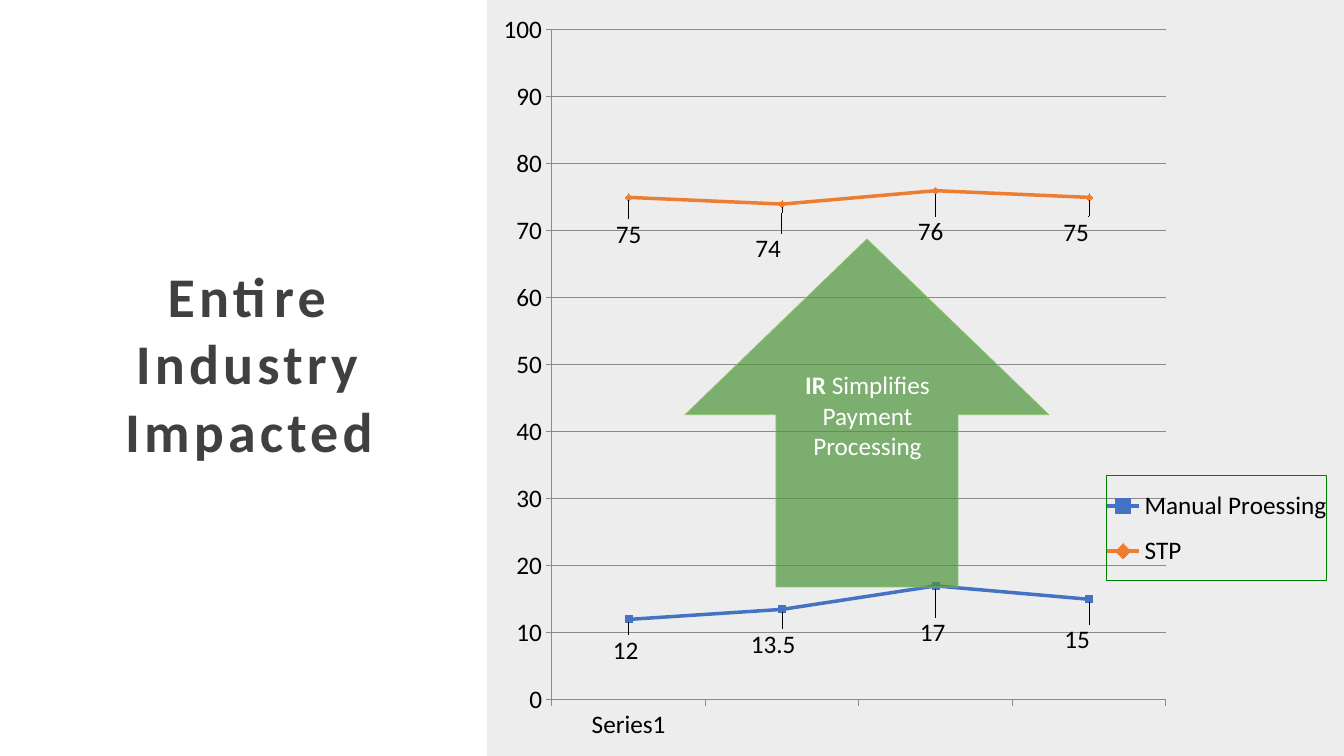
from lxml import etree
from pptx import Presentation, util as u
from pptx.chart.data import CategoryChartData
from pptx.dml.color import RGBColor
from pptx.enum import chart as ch, shapes, text
from pptx.oxml import parse_xml
from pptx.oxml.ns import nsdecls, qn

# Content
TITLE = "Entire Industry Impacted"
ARROW_RUNS = [("IR", True), (" Simplifies Payment Processing", False)]
CATEGORIES = ["Series1", "", "", ""]
BLUE, ORANGE = RGBColor(0x44, 0x72, 0xC4), RGBColor(0xED, 0x7D, 0x31)
# name, values, colour, marker, label shifts in px, leader lines
SERIES = [
    ("Manual Proessing", (12, 13.5, 17, 15), BLUE, ch.XL_MARKER_STYLE.SQUARE,
     [(-3, 8), (-9, 12), (-3, 24), (-12, 18)], 0),
    ("STP", (75, 74, 76, 75), ORANGE, ch.XL_MARKER_STYLE.DIAMOND,
     [(0, 14), (-14, 22), (-5, 18), (-13, 12)], 1),
]

# Places in px: left, top, width, height
SLIDE = (1344, 756)
CHART = (487, 0, 857, 756)
PLOT = (552, 30, 614, 670)
LEGEND = (1111, 476, 220, 105)
TITLE_BOX = (46, 256, 406, 213)
ARROW = (685, 239, 364, 348)
ARROW_TEXT = (761, 362, 213, 106)

BLACK = RGBColor(0, 0, 0)
WHITE = RGBColor(0xFF, 0xFF, 0xFF)
DARK = RGBColor(0x40, 0x40, 0x40)
GREY = RGBColor(0x8B, 0x8B, 0x8B)
PANEL = RGBColor(0xED, 0xED, 0xED)
GREEN = RGBColor(0x4D, 0x94, 0x3C)
LIGHT_GREEN = RGBColor(0x8C, 0xC6, 0x68)
LEGEND_GREEN = RGBColor(0x00, 0x80, 0x00)
C15 = "http://schemas.microsoft.com/office/drawing/2012/chart"


def px(n):
    return u.Emu(round(n * 914400 / 100.8))


def place(box):
    return [px(n) for n in box]


def style(font, color, **values):
    for name, value in {"name": "Calibri", **values}.items():
        setattr(font, name, value)
    font.color.rgb = color


def stroke(line, color, width):
    line.color.rgb = color
    line.width = u.Pt(width)


def layout_xml(**values):
    items = "".join(f'<c:{k} val="{v}"/>' for k, v in values.items())
    return parse_xml(f'<c:layout {nsdecls("c")}><c:manualLayout>{items}'
                     '</c:manualLayout></c:layout>')


def fixed_layout(box, **target):
    left, top, width, height = box
    return layout_xml(**target, xMode="edge", yMode="edge",
                      x=round((left - CHART[0]) / CHART[2], 4),
                      y=round((top - CHART[1]) / CHART[3], 4),
                      w=round(width / CHART[2], 4),
                      h=round(height / CHART[3], 4))


def set_layout(element, layout, after=None):
    for old in element.findall(qn("c:layout")):
        element.remove(old)
    if after is None:
        element.insert(0, layout)
    else:
        element.find(qn(after)).addnext(layout)


def add_chart(s):
    data = CategoryChartData()
    data.categories = CATEGORIES
    for name, values, *_ in SERIES:
        data.add_series(name, values)
    chart = s.shapes.add_chart(ch.XL_CHART_TYPE.LINE_MARKERS, *place(CHART), data).chart
    chart.has_title = False
    style(chart.font, BLACK, size=u.Pt(18))
    chart.plots[0].vary_by_categories = False

    # Panel, plot area and legend
    area = chart.element.find(qn("c:chart"))
    area.addnext(parse_xml(
        f'<c:spPr {nsdecls("c", "a")}><a:solidFill><a:srgbClr val="{PANEL}"/>'
        '</a:solidFill><a:ln><a:noFill/></a:ln></c:spPr>'))
    set_layout(area.find(qn("c:plotArea")), fixed_layout(PLOT, layoutTarget="inner"))
    chart.has_legend = True
    chart.legend.position = ch.XL_LEGEND_POSITION.RIGHT
    chart.legend.include_in_layout = False
    legend = chart.legend._element
    set_layout(legend, fixed_layout(LEGEND), "c:legendPos")
    legend.find(qn("c:overlay")).addnext(parse_xml(
        f'<c:spPr {nsdecls("c", "a")}><a:noFill/><a:ln w="9525"><a:solidFill>'
        f'<a:srgbClr val="{LEGEND_GREEN}"/></a:solidFill></a:ln></c:spPr>'))

    # Axes
    val = chart.value_axis
    val.minimum_scale, val.maximum_scale, val.major_unit = 0, 100, 10
    val.has_major_gridlines = True
    stroke(val.major_gridlines.format.line, GREY, 0.75)
    for axis in (chart.category_axis, val):
        axis.major_tick_mark = ch.XL_TICK_MARK.OUTSIDE
        axis.minor_tick_mark = ch.XL_TICK_MARK.NONE
        stroke(axis.format.line, GREY, 0.75)

    # Lines, markers and shifted labels
    for series, (_, _, color, marker, shifts, leaders) in zip(chart.plots[0].series, SERIES):
        series.smooth = False
        stroke(series.format.line, color, 2.5)
        series.marker.style, series.marker.size = marker, 5
        series.marker.format.fill.solid()
        series.marker.format.fill.fore_color.rgb = color
        stroke(series.marker.format.line, color, 0.75)
        labels = series.data_labels
        labels.show_value = True
        labels.position = ch.XL_LABEL_POSITION.BELOW
        for i, (dx, dy) in enumerate(shifts):
            series.points[i].data_label.position = ch.XL_LABEL_POSITION.BELOW
            label = labels._element.findall(qn("c:dLbl"))[i]
            set_layout(label, layout_xml(x=round(dx / CHART[2], 4),
                                         y=round(dy / CHART[3], 4)), "c:idx")
        for old in labels._element.findall(qn("c:showLeaderLines")):
            labels._element.remove(old)
        ext_list = etree.SubElement(labels._element, qn("c:extLst"))
        ext = etree.SubElement(ext_list, qn("c:ext"), nsmap={"c15": C15},
                               uri="{CE6537A1-D6FC-4f65-9D91-7224C49458BB}")
        etree.SubElement(ext, f"{{{C15}}}showLeaderLines", val=str(leaders))


def fill_text(sp, runs, color, size):
    tf = sp.text_frame
    tf.word_wrap = True
    tf.auto_size = text.MSO_AUTO_SIZE.NONE
    tf.vertical_anchor = text.MSO_ANCHOR.MIDDLE
    for side in ("left", "right"):
        setattr(tf, f"margin_{side}", u.Inches(0.1))
    p = tf.paragraphs[0]
    p.alignment, p.line_spacing = text.PP_ALIGN.CENTER, 1.0
    for words, bold in runs:
        r = p.add_run()
        r.text = words
        style(r.font, color, size=u.Pt(size), bold=bold)
    return p


def main():
    prs = Presentation()
    prs.slide_width, prs.slide_height = place(SLIDE)
    s = prs.slides.add_slide(prs.slide_layouts[5])
    add_chart(s)

    # Title
    title = s.shapes.title
    title.left, title.top, title.width, title.height = place(TITLE_BOX)
    p = fill_text(title, [(TITLE, True)], DARK, 40)
    p.runs[0].font._element.set("spc", "300")

    # Arrow with its caption
    arrow = s.shapes.add_shape(shapes.MSO_SHAPE.UP_ARROW, *place(ARROW))
    arrow.shadow.inherit = False
    arrow.adjustments[0], arrow.adjustments[1] = 0.5, 0.505
    arrow.fill.solid()
    arrow.fill.fore_color.rgb = GREEN
    color = arrow._element.spPr.find(qn("a:solidFill"))[0]
    etree.SubElement(color, qn("a:alpha"), val="70000")
    stroke(arrow.line, LIGHT_GREEN, 0.5)
    fill_text(s.shapes.add_textbox(*place(ARROW_TEXT)), ARROW_RUNS, WHITE, 18)

    prs.save("out.pptx")


if __name__ == "__main__":
    main()
